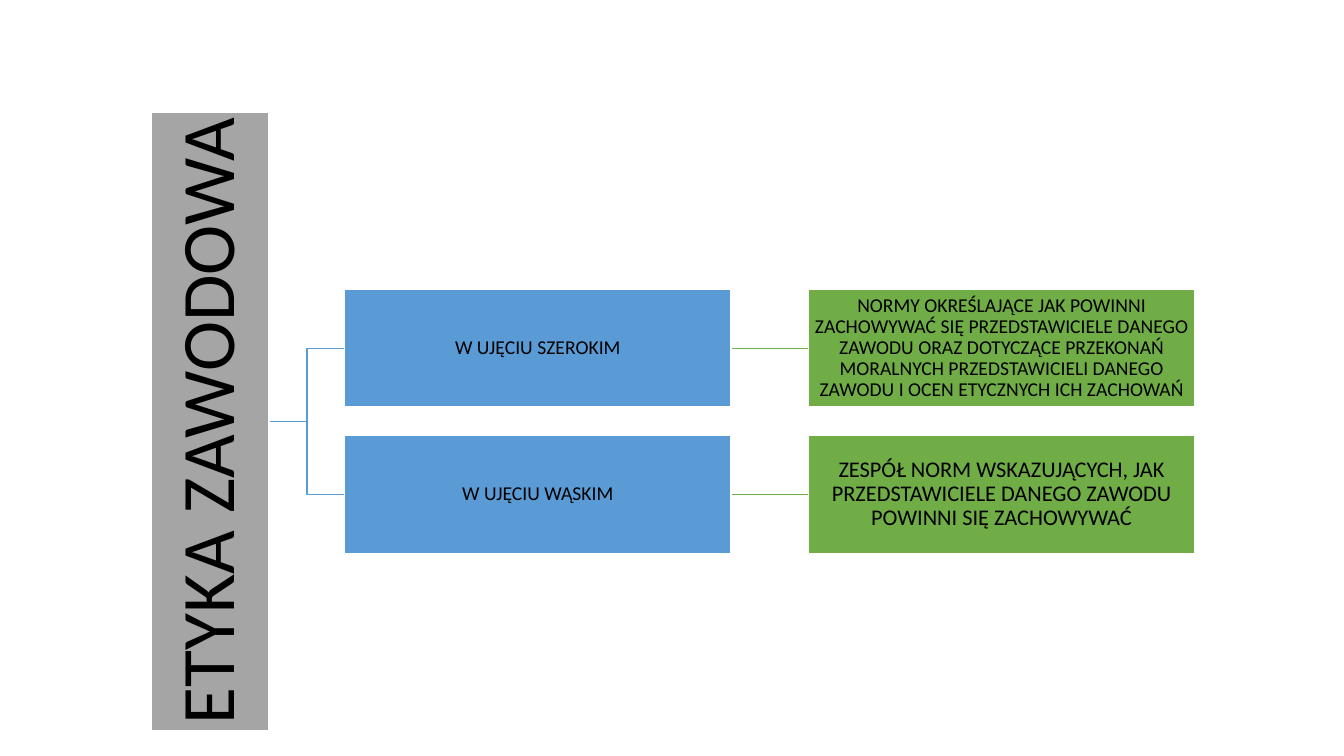
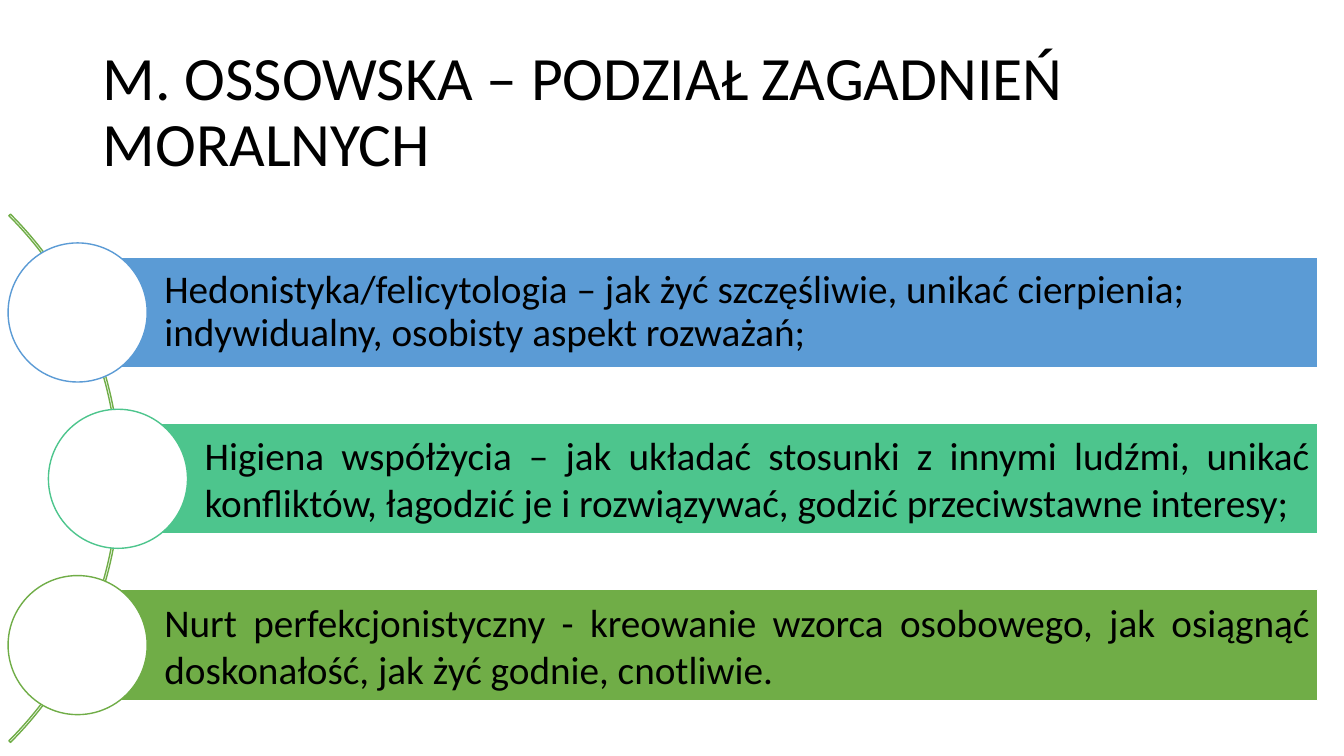
from pptx import Presentation
from pptx import util as u
from pptx.dml.color import RGBColor
from pptx.enum import shapes, text
from pptx.oxml import parse_xml
from pptx.oxml.ns import nsdecls

BLUE, GREEN, MINT, GRAY = "5B9BD5", "70AD47", "4DC58D", "A5A5A5"
WHITE, BLACK = "FFFFFF", "000000"
FONT = "Calibri"
LEFT, MID, JUST = text.PP_ALIGN.LEFT, text.PP_ALIGN.CENTER, text.PP_ALIGN.JUSTIFY
KIND, LINK = shapes.MSO_SHAPE, shapes.MSO_CONNECTOR


def color(code):
    return RGBColor.from_string(code)


def write(shape, words, size, align=MID, space=0.9, pads=(0.1, 0.05, 0.1, 0.05)):
    """Fill a shape with one paragraph; pads are left, top, right, bottom."""
    frame = shape.text_frame
    frame.word_wrap = True
    frame.vertical_anchor = text.MSO_ANCHOR.MIDDLE
    (frame.margin_left, frame.margin_top,
     frame.margin_right, frame.margin_bottom) = map(u.Inches, pads)
    para = frame.paragraphs[0]
    para.alignment, para.line_spacing = align, space
    run = para.add_run()
    run.text = words
    run.font.name, run.font.size = FONT, u.Pt(size)
    run.font.color.rgb = color(BLACK)


class Deck:
    def __init__(self):
        self.file = Presentation()
        self.file.slide_width = u.Inches(13.33)
        self.file.slide_height = u.Inches(7.5)
        self.slide = None

    def page(self):
        self.slide = self.file.slides.add_slide(self.file.slide_layouts[6])

    def title(self, words):
        box = self.slide.shapes.add_textbox(*map(u.Inches, (0.92, 0.4, 11.5, 1.45)))
        write(box, words, 44, LEFT)

    def shape(self, kind, area, fill=None, line=WHITE):
        item = self.slide.shapes.add_shape(kind, *map(u.Inches, area))
        item.shadow.inherit = False
        if fill:
            item.fill.solid()
            item.fill.fore_color.rgb = color(fill)
        else:
            item.fill.background()
        item.line.color.rgb = color(line)
        item.line.width = u.Pt(1)
        return item

    def box(self, area, fill, words, size, **style):
        item = self.shape(KIND.RECTANGLE, area, fill)
        write(item, words, size, **style)
        return item

    def link(self, kind, start, end, line):
        """Join the right side of start to the left side of end."""
        wire = self.slide.shapes.add_connector(kind, 0, 0, 0, 0)
        wire.begin_connect(start, 3)
        wire.end_connect(end, 1)
        wire.line.color.rgb = color(line)
        wire.line.width = u.Pt(1)
        wire._element.spPr.append(parse_xml("<a:effectLst %s/>" % nsdecls("a")))
        # Lines lie behind the boxes
        self.slide.shapes._spTree.insert(2, wire._element)


def tree(deck):
    deck.page()
    # Root, read from bottom to top
    root = deck.box((1.5, 1.11, 1.17, 6.14), GRAY, "ETYKA ZAWODOWA", 54, pads=(0.04,) * 4)
    root.text_frame._txBody.bodyPr.set("vert", "vert270")

    # Branches: a scope and its meaning
    rows = [
        ("W UJĘCIU SZEROKIM",
         "NORMY OKREŚLAJĄCE JAK POWINNI ZACHOWYWAĆ SIĘ PRZEDSTAWICIELE DANEGO "
         "ZAWODU ORAZ DOTYCZĄCE PRZEKONAŃ MORALNYCH PRZEDSTAWICIELI DANEGO "
         "ZAWODU I OCEN ETYCZNYCH ICH ZACHOWAŃ", 14),
        ("W UJĘCIU WĄSKIM",
         "ZESPÓŁ NORM WSKAZUJĄCYCH, JAK PRZEDSTAWICIELE DANEGO ZAWODU "
         "POWINNI SIĘ ZACHOWYWAĆ", 16),
    ]
    pads = (0.01,) * 4
    for i, (scope, sense, size) in enumerate(rows):
        top = 2.87 + i * 1.45
        near = deck.box((3.42, top, 3.83, 1.17), BLUE, scope, 14, pads=pads)
        far = deck.box((8.02, top, 3.83, 1.17), GREEN, sense, size, pads=pads)
        deck.link(LINK.ELBOW, root, near, BLUE)
        deck.link(LINK.STRAIGHT, near, far, GREEN)


def split(deck):
    deck.page()
    deck.title("M. OSSOWSKA – PODZIAŁ ZAGADNIEŃ MORALNYCH")

    # Thin arc behind the bars
    arc = deck.shape(KIND.BLOCK_ARC, (-6.22, 1.04, 7.41, 7.41), line=GREEN)
    for i, value in enumerate((189, 27, 0.003)):
        arc.adjustments[i] = value

    # Bars, each with a circle on its left end
    bars = [
        (0.76, BLUE, LEFT, 0.9,
         "Hedonistyka/felicytologia – jak żyć szczęśliwie, unikać cierpienia; "
         "indywidualny, osobisty aspekt rozważań;"),
        (1.16, MINT, JUST, 1.0,
         "Higiena współżycia – jak układać stosunki z innymi ludźmi, unikać "
         "konfliktów, łagodzić je i rozwiązywać, godzić przeciwstawne interesy;"),
        (0.76, GREEN, JUST, 1.0,
         "Nurt perfekcjonistyczny - kreowanie wzorca osobowego, jak osiągnąć "
         "doskonałość, jak żyć godnie, cnotliwie."),
    ]
    for i, (left, tint, align, space, words) in enumerate(bars):
        top = 2.55 + i * 1.65
        deck.box((left, top, 13.07 - left, 1.1), tint, words, 28,
                 align=align, space=space, pads=(0.87, 0.08, 0.08, 0.08))
        deck.shape(KIND.OVAL, (left - 0.68, top - 0.14, 1.38, 1.38), WHITE, tint)


def main():
    deck = Deck()
    tree(deck)
    split(deck)
    deck.file.save("out.pptx")


if __name__ == "__main__":
    main()
